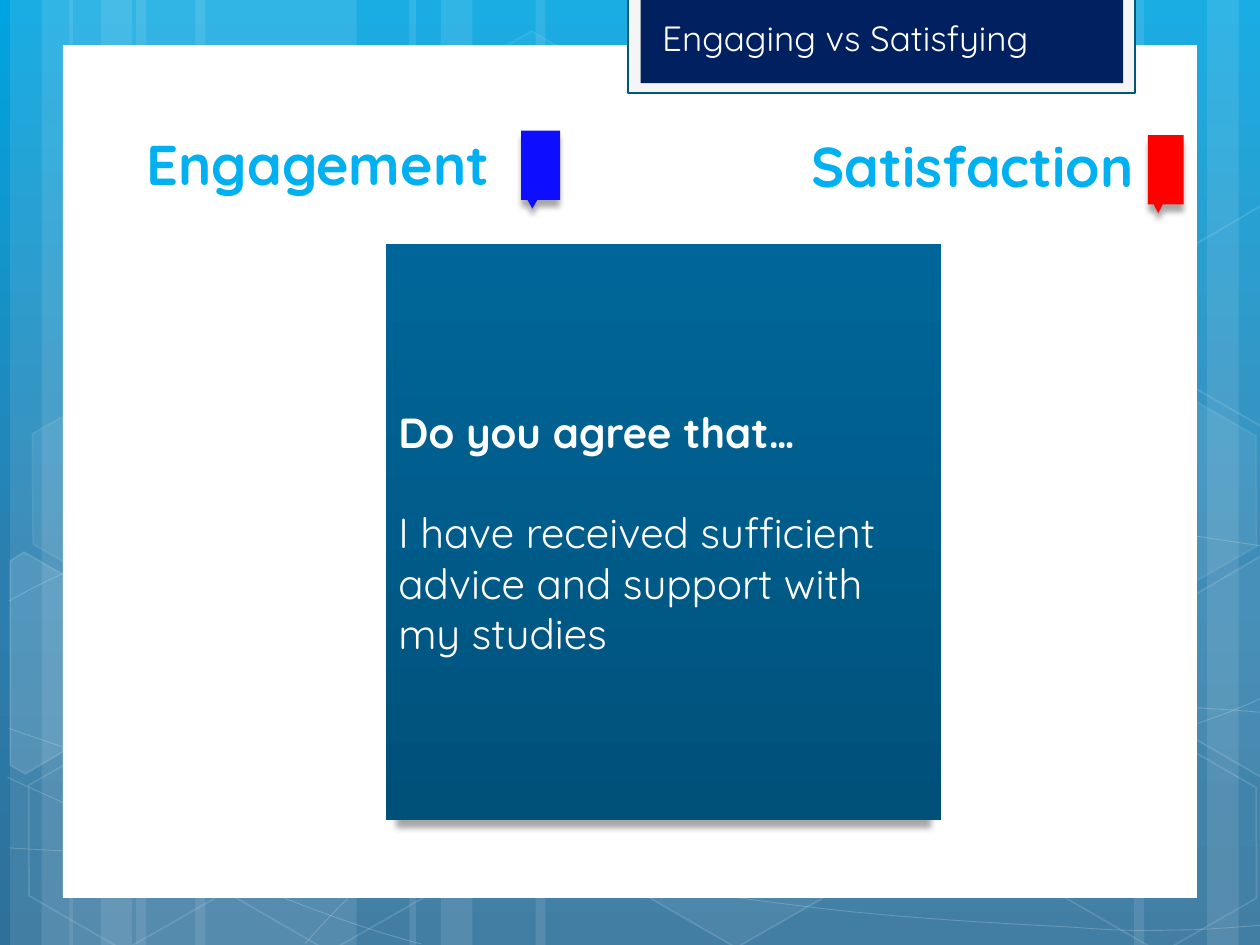
from copy import deepcopy
from math import cos, radians, sin

from lxml import etree
from pptx import Presentation
from pptx.dml.color import RGBColor
from pptx.enum.shapes import MSO_SHAPE
from pptx.enum.text import MSO_ANCHOR, PP_ALIGN
from pptx.oxml import parse_xml
from pptx.oxml.ns import nsdecls, qn
from pptx.util import Inches, Pt

RECTANGLE, HEXAGON, CALLOUT = MSO_SHAPE.RECTANGLE, MSO_SHAPE.HEXAGON, MSO_SHAPE.RECTANGULAR_CALLOUT
LEFT, TOP, MIDDLE = PP_ALIGN.LEFT, MSO_ANCHOR.TOP, MSO_ANCHOR.MIDDLE
WHITE = RGBColor(0xFF, 0xFF, 0xFF)
PALE = RGBColor(0xF5, 0xF5, 0xF5)
TEAL = RGBColor(0x00, 0x58, 0x78)
NAVY = RGBColor(0x00, 0x20, 0x60)
SKY = RGBColor(0x00, 0xB0, 0xF0)
BLUE = RGBColor(0x0D, 0x0D, 0xFF)
RED = RGBColor(0xFF, 0x00, 0x00)
CARD_TOP = RGBColor(0x00, 0x66, 0x99)
CARD_BOTTOM = RGBColor(0x00, 0x51, 0x7A)
BACKDROP = [(0, RGBColor(0x00, 0xA4, 0xE0)), (0.62, RGBColor(0x2B, 0x7F, 0xAF)),
            (1, RGBColor(0x2D, 0x70, 0x9A))]
FONT = "Quicksand"
TILT = 30
SHADOW = (
    f'<a:effectLst {nsdecls("a")}><a:outerShdw blurRad="44450" dist="50800" dir="5400000" '
    'sx="96000" algn="t" rotWithShape="0"><a:srgbClr val="000000"><a:alpha val="34000"/>'
    '</a:srgbClr></a:outerShdw></a:effectLst>'
)

deck = Presentation()
deck.slide_width, deck.slide_height = Inches(10), Inches(7.5)
page = deck.slides.add_slide(deck.slide_layouts[5])
CELL = deck.slide_width / 100
ROWS = 75


def paint(shape, fill=None, fill_share=100, line=None, width=1, line_share=100):
    shape.shadow.inherit = False
    properties = shape.element.spPr
    shape.fill.background()
    shape.line.fill.background()
    faded = []
    if fill is not None:
        shape.fill.solid()
        shape.fill.fore_color.rgb = fill
        faded.append((properties, fill_share))
    if line is not None:
        shape.line.width = Pt(width)
        shape.line.color.rgb = line
        faded.append((properties.find(qn("a:ln")), line_share))
    for holder, share in faded:
        if share < 100:
            color = holder.find(qn("a:solidFill"))[0]
            etree.SubElement(color, qn("a:alpha")).set("val", str(share * 1000))


def place(shapes, kind, left, top, width, height):
    return shapes.add_shape(kind, *[round(value * CELL) for value in (left, top, width, height)])


backdrop = page.background.fill
backdrop.gradient()
backdrop.gradient_angle = 270
last_stop = list(page.element.iter(qn("a:gs")))[-1]
last_stop.addnext(deepcopy(last_stop))
for stop, (position, color) in zip(backdrop.gradient_stops, BACKDROP):
    stop.position = position
    stop.color.rgb = color

pattern = page.shapes.add_group_shape().shapes
bands = [(10.8, 17.5), (0.8, 5), (3.3, 8.3), (15.5, 17.5), (5.5, 5), (8, 8.3),
         (73.3, 17.5), (95.8, 5), (90, 8.3), (42.5, 30.8), (32.5, 5), (35, 8.3)]
for index, (left, width) in enumerate(bands):
    band = place(pattern, RECTANGLE, left, 0, width, ROWS)
    band.rotation = 180 if index in (6, 7, 8) else 0
    paint(band, WHITE, 10)

curves = [
    [(0.7, 67.3), (6.1, 67.6), (11.5, 67.9), (19, 67.8), (26.5, 67.7), (35.8, 67.5), (45.8, 66.5),
     (55.8, 65.5), (70, 63.6), (79.2, 61.7), (88.3, 59.8), (97.7, 56.8), (100.7, 55.1)],
    [(0.7, 47.7), (3.6, 46.1), (6.5, 44.6), (12.1, 43.1), (17.8, 41.6), (25.9, 39.4), (34.7, 38.7),
     (43.6, 38), (54.4, 37.9), (65.4, 38.7), (76.4, 39.5), (94.7, 42.6), (100.7, 43.4)],
    [(0.6, 61.7), (12.7, 67.2), (24.7, 72.7), (33.4, 74.9)],
    [(0.7, 57.8), (3.8, 58.9), (7, 60), (12.8, 61.6), (18.6, 63.1), (27.3, 65.6), (35.7, 67.3),
     (44, 69), (54.5, 70.8), (62.8, 71.8), (71.1, 72.9), (80, 73.3), (85.3, 73.6),
     (90.5, 74), (91.9, 73.8), (94.5, 73.8), (97.1, 73.7), (98.9, 73.5), (100.7, 73.4)],
    [(24.2, 74.9), (26, 72.9), (27.8, 70.9), (30.2, 69.1), (32.6, 67.3), (36, 65.3), (38.8, 63.9),
     (41.6, 62.5), (43.3, 61.9), (47, 60.9), (50.6, 59.9), (57.3, 58.5), (60.8, 57.8),
     (64.4, 57.1), (64.9, 57.1), (68, 56.9), (71.1, 56.6), (76, 56.3), (79.4, 56.2),
     (82.9, 56.1), (88.6, 56.2), (88.6, 56.2), (90.8, 56.2), (93, 56.2), (95.3, 56.2),
     (97.1, 56.3), (98.8, 56.4), (100.6, 56.6)],
]
for curve in curves:
    points = [(x * CELL, y * CELL) for x, y in curve]
    builder = pattern.build_freeform(*points[0])
    builder.add_line_segments(points[1:], close=False)
    wave = builder.convert_to_shape()
    segments = list(wave.element.iter(qn("a:lnTo")))
    for start in range(0, len(segments), 3):
        bend = etree.Element(qn("a:cubicBezTo"))
        segments[start].addprevious(bend)
        for segment in segments[start:start + 3]:
            bend.append(segment[0])
            segment.getparent().remove(segment)
    paint(wave, line=WHITE, width=0.5, line_share=20)

hexagons = [(33.4, 3.6, 4, 8), (49.7, 58.9, 6, 12), (1.1, 59.1, 0, 12), (1.4, 31.2, 7, 8),
            (17.4, 59.2, 0, 12), (75.3, 45.3, 10, 12), (83.4, 59.3, 0, 12), (83.4, 31.4, 7, 8)]
for left, top, fill_share, line_share in hexagons:
    hexagon = place(pattern, HEXAGON, left, top, 17.5, 15.2)
    hexagon.rotation = TILT
    hexagon.adjustments[0], hexagon.adjustments[1] = 0.29, 1.15
    paint(hexagon, WHITE if fill_share else None, fill_share, WHITE, 1, line_share)

cut_hexagons = [
    (10, (3.6, 53.5), [(0.8, 44.5), (1.9, 43.8), (9.6, 48.2), (9.5, 57), (2, 61.4), (0.8, 60.7)]),
    (4, (98.5, 52), [(92.6, 48.5), (100.1, 44.1), (100.9, 44.6), (100.9, 61.3), (100.2, 61.7), (92.6, 57.3)]),
    (0, (98.5, 24.1), [(92.6, 20.7), (100.1, 16.3), (101, 16.8), (100.9, 33.5), (100.2, 33.9), (92.6, 29.5)]),
]
across, down = cos(radians(TILT)), sin(radians(TILT))
for fill_share, (middle_x, middle_y), corners in cut_hexagons:
    points = [((middle_x + (x - middle_x) * across + (y - middle_y) * down) * CELL,
               (middle_y - (x - middle_x) * down + (y - middle_y) * across) * CELL) for x, y in corners]
    builder = pattern.build_freeform(*points[0])
    builder.add_line_segments(points[1:], close=True)
    cut_hexagon = builder.convert_to_shape()
    cut_hexagon.rotation = TILT
    paint(cut_hexagon, WHITE if fill_share else None, fill_share, WHITE, 1, 12)

paint(place(page.shapes, RECTANGLE, 5, 3.6, 90, 67.65), WHITE, line=WHITE, width=0.5)
paint(place(page.shapes, RECTANGLE, 49.87, -0.2, 40.2, 7.6), PALE, line=TEAL, width=1.25)
paint(place(page.shapes, RECTANGLE, 50.85, -0.2, 38.3, 6.8), NAVY)

card = place(page.shapes, RECTANGLE, 30.63, 19.4, 44.06, 45.7)
paint(card)
card.fill.gradient()
card.fill.gradient_angle = 270
for stop, color in zip(card.fill.gradient_stops, (CARD_TOP, CARD_BOTTOM)):
    stop.color.rgb = color
card.text_frame.word_wrap = True
card.text_frame.vertical_anchor = MIDDLE
card.text_frame.text = "Do you agree that…\nI have received sufficient advice and support with my studies"
question, statement = card.text_frame.paragraphs
statement.space_before = Pt(28.5)
for para in (question, statement):
    para.alignment = LEFT
    span = para.runs[0]
    span.font.name, span.font.size = FONT, Pt(24)
    span.font.color.rgb = WHITE
    span.font.bold = para is question

for heading, left, top, width in [("Engagement", 10.65, 9.8, 38.6), ("Satisfaction", 63.4, 9.95, 29.7)]:
    box = page.shapes.add_textbox(*[round(value * CELL) for value in (left, top, width, 6.4)])
    box.text_frame.word_wrap = True
    box.text_frame.text = heading
    span = box.text_frame.paragraphs[0].runs[0]
    span.font.name, span.font.size, span.font.bold = FONT, Pt(32), True
    span.font.color.rgb = SKY

title = page.shapes.title
title.left, title.top, title.width, title.height = [
    round(value * CELL) for value in (50.85, 0.8, 38.6, 6.8)]
title.text_frame.text = "Engaging vs Satisfying"
title.text_frame.vertical_anchor = TOP
title.text_frame.margin_left = round(1.7 * CELL)
para = title.text_frame.paragraphs[0]
para.alignment = LEFT
span = para.runs[0]
span.font.name, span.font.size = FONT, Pt(20)
span.font.color.rgb = WHITE
page.shapes.element.append(title.element)

flags = []
for left, top, width, color in [(41.35, 10.37, 3.1, BLUE), (91.1, 10.73, 2.85, RED)]:
    flag = place(page.shapes, CALLOUT, left, top, width, 5.5)
    paint(flag, color)
    flags.append(flag)

for shape in [card] + flags:
    properties = shape.element.spPr
    properties.replace(properties.find(qn("a:effectLst")), parse_xml(SHADOW))

deck.save("out.pptx")
